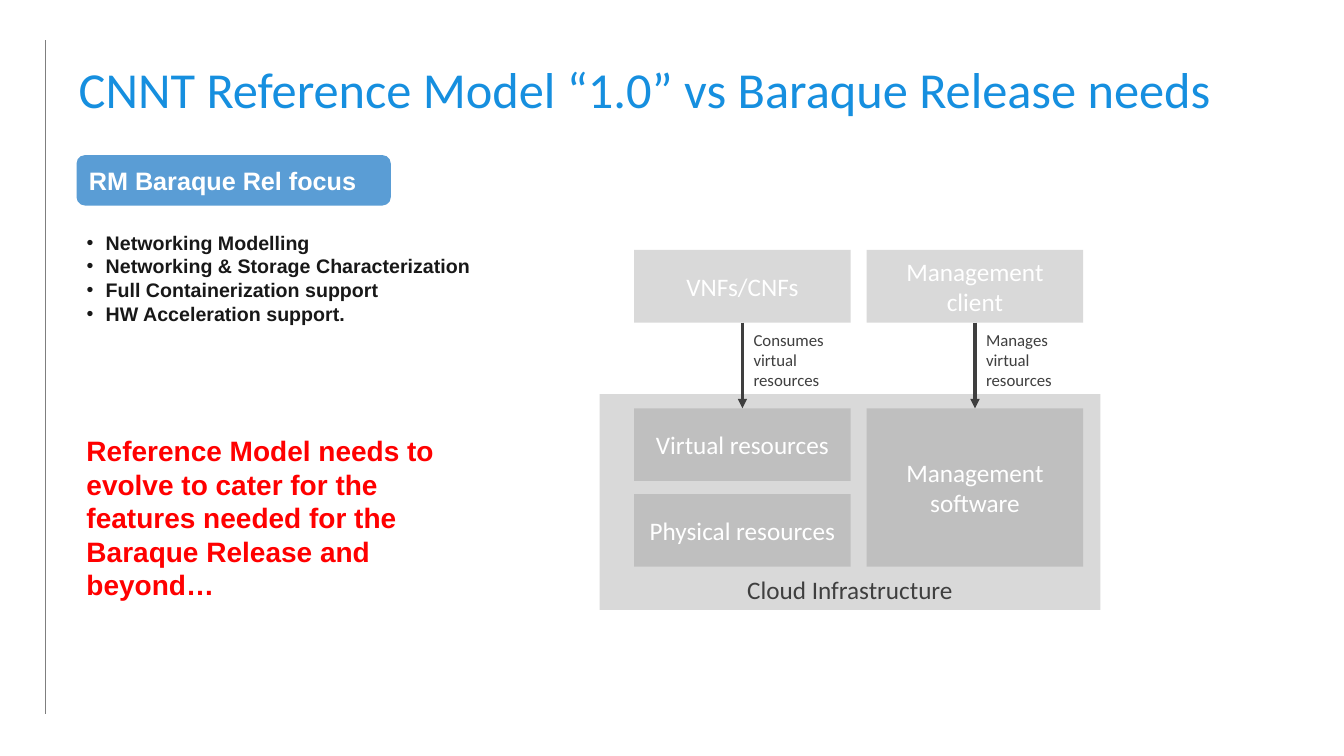
from lxml.etree import SubElement
from pptx import Presentation
from pptx.dml.color import RGBColor
from pptx.enum.shapes import MSO_CONNECTOR, MSO_SHAPE
from pptx.enum.text import MSO_ANCHOR, MSO_AUTO_SIZE, PP_ALIGN
from pptx.oxml.ns import qn
from pptx.util import Cm, Pt

COLORS = {
    "title": "168FDF", "rule": "7F7F7F", "label": "5A9DD5", "white": "FFFFFF",
    "light": "D9D9D9", "middle": "BFBFBF", "dark": "3F3F3F",
    "ink": "181818", "alert": "FF0000",
}


def write(box, lines, size, color, font="Calibri", bold=False,
          align=PP_ALIGN.LEFT, anchor=MSO_ANCHOR.TOP, bullet=None):
    """Fill a shape with one paragraph per line, all in the same style."""
    frame = box.text_frame
    frame.word_wrap = True
    frame.auto_size = MSO_AUTO_SIZE.NONE
    frame.vertical_anchor = anchor
    frame.text = "\n".join(lines)
    for para in frame.paragraphs:
        para.alignment = align
        para.space_before = Pt(0)
        if bullet:
            properties = para._p.get_or_add_pPr()
            properties.set("marL", str(Cm(0.48)))
            properties.set("indent", str(-Cm(0.48)))
            SubElement(properties, qn("a:buFont"), typeface="Arial")
            SubElement(properties, qn("a:buChar"), char=bullet)
        para.font.name = font
        para.font.size = Pt(size)
        para.font.bold = bold
        para.font.color.rgb = RGBColor.from_string(COLORS[color])


def add_line(start, end, color, width):
    line = page.shapes.add_connector(MSO_CONNECTOR.STRAIGHT, *start, *end)
    line.line.color.rgb = RGBColor.from_string(COLORS[color])
    line.line.width = Pt(width)
    SubElement(line._element.spPr, qn("a:effectLst"))
    return line


deck = Presentation()
deck.slide_width, deck.slide_height = Cm(33.87), Cm(19.05)
page = deck.slides.add_slide(deck.slide_layouts[1])

add_line((Cm(1.14), Cm(1.02)), (Cm(1.14), Cm(17.98)), "rule", 0.5)

# Title and focus list
title, focus_list = page.shapes.title, page.placeholders[1]
title.left, title.top, title.width, title.height = Cm(1.73), Cm(1.02), Cm(30.38), Cm(2.59)
write(title, ["CNNT Reference Model “1.0” vs Baraque Release needs"], 36, "title",
      anchor=MSO_ANCHOR.MIDDLE)
title.text_frame.paragraphs[0].line_spacing = 0.9

focus_list.left, focus_list.top = Cm(1.93), Cm(5.69)
focus_list.width, focus_list.height = Cm(10.46), Cm(3.25)
write(focus_list,
      ["Networking Modelling", "Networking & Storage Characterization",
       "Full Containerization support", "HW Acceleration support."],
      14, "ink", "Arial", bold=True, bullet="•")

# Architecture blocks: two columns above and inside the cloud
LEFT, RIGHT = 15.98, 21.84
BLOCK_WIDTH, BLOCK_HEIGHT = 5.46, 1.83
CLIENT_TOP, CLOUD_TOP, VIRTUAL_TOP, PHYSICAL_TOP = 6.3, 9.93, 10.29, 12.45
SOFTWARE_HEIGHT = PHYSICAL_TOP + BLOCK_HEIGHT - VIRTUAL_TOP

blocks = {}
for name, left, top, width, height, fill, size, color, anchor in [
    ("Cloud Infrastructure", 15.11, CLOUD_TOP, 12.62, 5.44, "light", 18, "dark", MSO_ANCHOR.BOTTOM),
    *[(name, left, top, BLOCK_WIDTH, height, fill, 18, "white", MSO_ANCHOR.MIDDLE)
      for name, left, top, height, fill in [
          ("Physical resources", LEFT, PHYSICAL_TOP, BLOCK_HEIGHT, "middle"),
          ("Virtual resources", LEFT, VIRTUAL_TOP, BLOCK_HEIGHT, "middle"),
          ("Management software", RIGHT, VIRTUAL_TOP, SOFTWARE_HEIGHT, "middle"),
          ("VNFs/CNFs", LEFT, CLIENT_TOP, BLOCK_HEIGHT, "light"),
          ("Management client", RIGHT, CLIENT_TOP, BLOCK_HEIGHT, "light"),
      ]],
]:
    block = page.shapes.add_shape(MSO_SHAPE.RECTANGLE, Cm(left), Cm(top), Cm(width), Cm(height))
    block.shadow.inherit = False
    block.fill.solid()
    block.fill.fore_color.rgb = RGBColor.from_string(COLORS[fill])
    block.line.fill.background()
    write(block, [name], size, color, align=PP_ALIGN.CENTER, anchor=anchor)
    blocks[name] = block

# Arrows from each client to what it uses, with their captions
for source, target, caption in [
    ("VNFs/CNFs", "Virtual resources", "Consumes virtual resources"),
    ("Management client", "Management software", "Manages virtual resources"),
]:
    client = blocks[source]
    middle = client.left + client.width // 2
    arrow = add_line((middle, client.top + client.height), (middle, Cm(VIRTUAL_TOP)), "dark", 2.25)
    arrow.begin_connect(client, 2)
    arrow.end_connect(blocks[target], 0)
    SubElement(arrow.line._get_or_add_ln(), qn("a:tailEnd"), type="triangle")
    box = page.shapes.add_textbox(middle + Cm(0.03), Cm(8.18), Cm(3.1), Cm(1.8))
    write(box, [caption], 12, "dark")

# Focus label and conclusion
label = page.shapes.add_shape(MSO_SHAPE.ROUNDED_RECTANGLE, Cm(1.93), Cm(3.91), Cm(7.92), Cm(1.27))
label.shadow.inherit = False
label.fill.solid()
label.fill.fore_color.rgb = RGBColor.from_string(COLORS["label"])
label.line.fill.background()
write(label, ["RM Baraque Rel focus"], 18, "white", "Arial", bold=True, anchor=MSO_ANCHOR.MIDDLE)

conclusion = page.shapes.add_textbox(Cm(1.93), Cm(10.8), Cm(10.69), Cm(4.52))
write(conclusion,
      ["Reference Model needs to evolve to cater for the features needed for "
       "the Baraque Release and beyond…"],
      20, "alert", "Arial", bold=True)

deck.save("out.pptx")
